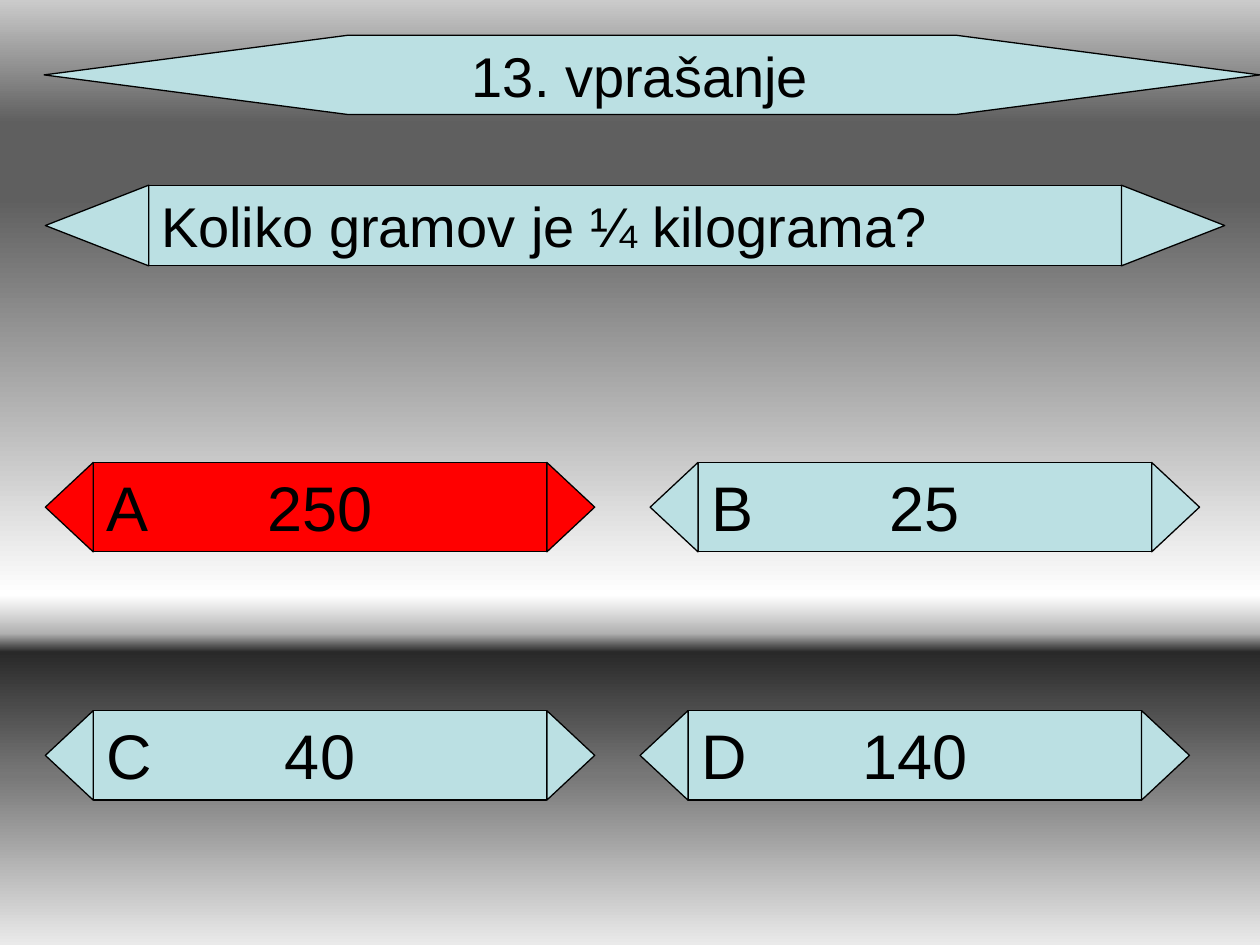
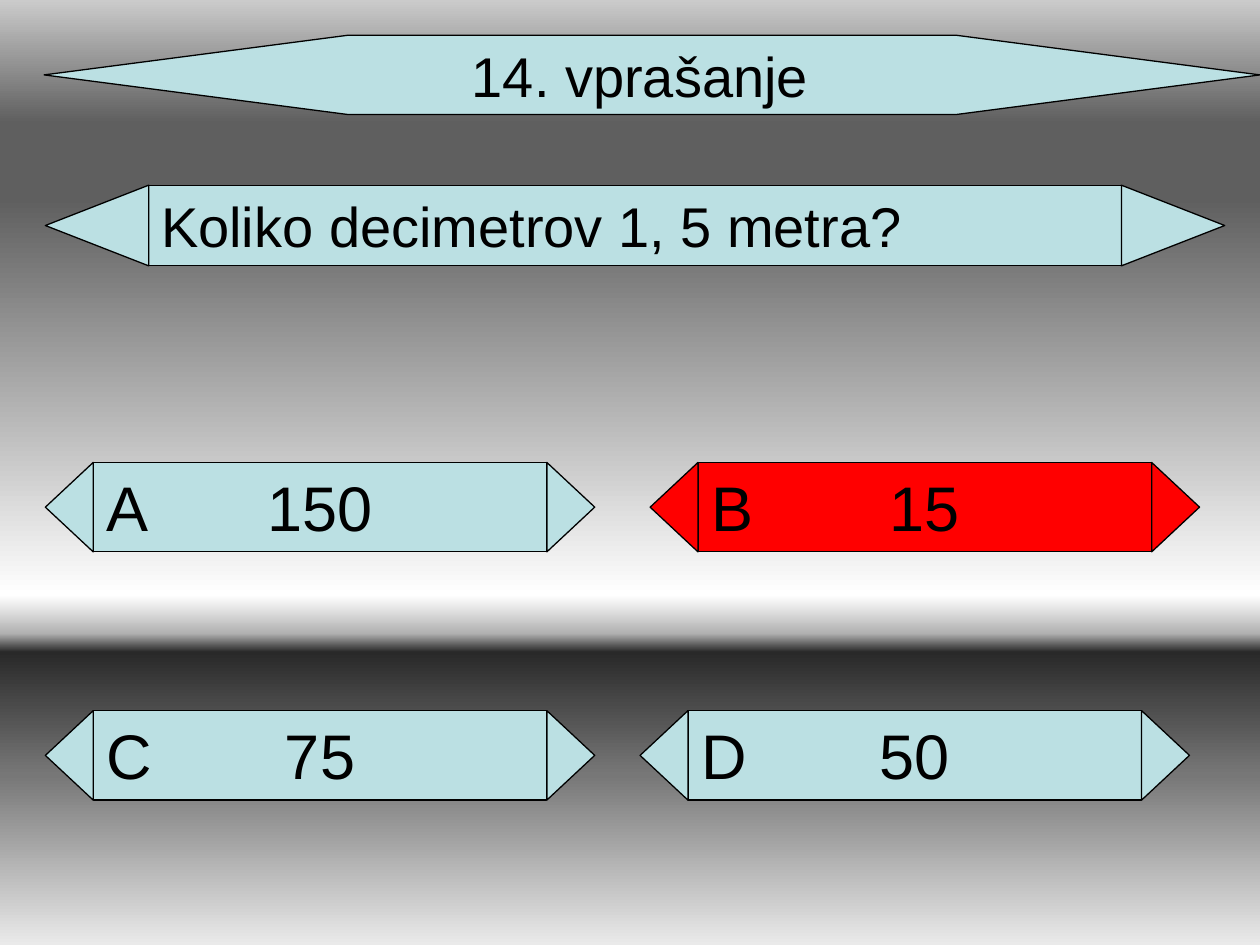
from dataclasses import dataclass

from lxml import etree
from pptx import Presentation
from pptx.dml.color import RGBColor
from pptx.enum import shapes, text
from pptx.oxml.ns import qn
from pptx.util import Inches, Pt


@dataclass(frozen=True)
class Theme:
    font: str = "Arial"
    ink: str = "000000"
    panel: str = "BBE0E3"
    correct: str = "FF0000"
    line_width: float = 0.75
    heading_size: int = 32
    answer_size: int = 36
    background: tuple = (
        (0, "CBCBCB"), (13, "5F5F5F"), (21, "5F5F5F"), (63, "FFFFFF"),
        (67, "B2B2B2"), (69, "292929"), (82, "777777"), (100, "EAEAEA"),
    )


THEME = Theme()
LEFT, CENTER = text.PP_ALIGN.LEFT, text.PP_ALIGN.CENTER
TITLE_BOX = (0.35, 0.28, 9.65, 0.63)
QUESTION_BOX = (0.36, 1.47, 9.36, 0.64)
QUESTION_TIP = 0.82
ANSWER_TIP = 0.38
ANSWER_BOXES = {
    "A": (0.36, 3.67, 4.36, 0.71),
    "B": (5.16, 3.67, 4.36, 0.71),
    "C": (0.36, 5.64, 4.36, 0.71),
    "D": (5.08, 5.64, 4.36, 0.71),
}
QUESTIONS = (
    ("13. vprašanje", "Koliko gramov je ¼ kilograma?",
     {"A": "250", "B": "25", "C": "40", "D": "140"}, "A"),
    ("14. vprašanje", "Koliko decimetrov 1, 5 metra?",
     {"A": "150", "B": "15", "C": "75", "D": "50"}, "B"),
)


def paint_background(slide):
    fill = slide.background.fill
    fill.gradient()
    fill.gradient_angle = 270
    stops = slide.element.find(".//" + qn("a:gsLst"))
    for stop in list(stops):
        stops.remove(stop)
    for percent, color in THEME.background:
        stop = etree.SubElement(stops, qn("a:gs"), pos=str(percent * 1000))
        etree.SubElement(stop, qn("a:srgbClr"), val=color)


def add_panel(container, preset, box, color):
    shape = container.add_shape(preset, *map(Inches, box))
    shape.shadow.inherit = False
    shape.fill.solid()
    shape.fill.fore_color.rgb = RGBColor.from_string(color)
    shape.line.color.rgb = RGBColor.from_string(THEME.ink)
    shape.line.width = Pt(THEME.line_width)
    return shape


def write(shape, words, size, alignment):
    frame = shape.text_frame
    frame.word_wrap = True
    frame.auto_size = text.MSO_AUTO_SIZE.SHAPE_TO_FIT_TEXT
    frame.vertical_anchor = text.MSO_ANCHOR.TOP
    paragraph = frame.paragraphs[0]
    paragraph.text = words
    paragraph.alignment = alignment
    paragraph.font.name = THEME.font
    paragraph.font.size = Pt(size)
    paragraph.font.color.rgb = RGBColor.from_string(THEME.ink)
    spacing = etree.Element(qn("a:spcBef"))
    etree.SubElement(spacing, qn("a:spcPct"), val="50000")
    paragraph._p.get_or_add_pPr().insert(0, spacing)


def add_label(container, box, words, size, alignment):
    write(container.add_textbox(*map(Inches, box)), words, size, alignment)


def add_title(slide, box, words):
    left, top, width, height = box
    hexagon = add_panel(slide.shapes, shapes.MSO_SHAPE.HEXAGON, box, THEME.panel)
    hexagon.adjustments[0] = 3.83
    label_box = (left + 2.37, top, 4.72, height)
    add_label(slide.shapes, label_box, words, THEME.heading_size, CENTER)


def add_pointed_bar(slide, box, tip, color, words, size, alignment):
    left, top, width, height = box
    group = slide.shapes.add_group_shape().shapes
    bar_box = (left + tip, top, width - 2 * tip, height)
    bar = add_panel(group, shapes.MSO_SHAPE.RECTANGLE, bar_box, color)
    write(bar, words, size, alignment)
    for center, rotation in ((left + width - tip / 2, 90), (left + tip / 2, 270)):
        tip_box = (center - height / 2, top + (height - tip) / 2, height, tip)
        triangle = add_panel(group, shapes.MSO_SHAPE.ISOSCELES_TRIANGLE, tip_box, color)
        triangle.rotation = rotation
    return group


def add_answer(slide, box, letter, value, color):
    left, top, width, height = box
    group = add_pointed_bar(slide, box, ANSWER_TIP, color, value, THEME.answer_size, CENTER)
    letter_box = (left + ANSWER_TIP + 0.01, top, 0.47, height)
    add_label(group, letter_box, letter, THEME.answer_size, LEFT)


def add_question_slide(presentation, title, question, answers, correct):
    slide = presentation.slides.add_slide(presentation.slide_layouts[6])
    paint_background(slide)
    add_title(slide, TITLE_BOX, title)
    add_pointed_bar(slide, QUESTION_BOX, QUESTION_TIP, THEME.panel,
                    question, THEME.heading_size, LEFT)
    for letter, value in answers.items():
        color = THEME.correct if letter == correct else THEME.panel
        add_answer(slide, ANSWER_BOXES[letter], letter, value, color)


def main():
    presentation = Presentation()
    presentation.slide_width = Inches(10)
    presentation.slide_height = Inches(7.5)
    for question in QUESTIONS:
        add_question_slide(presentation, *question)
    presentation.save("out.pptx")


if __name__ == "__main__":
    main()
